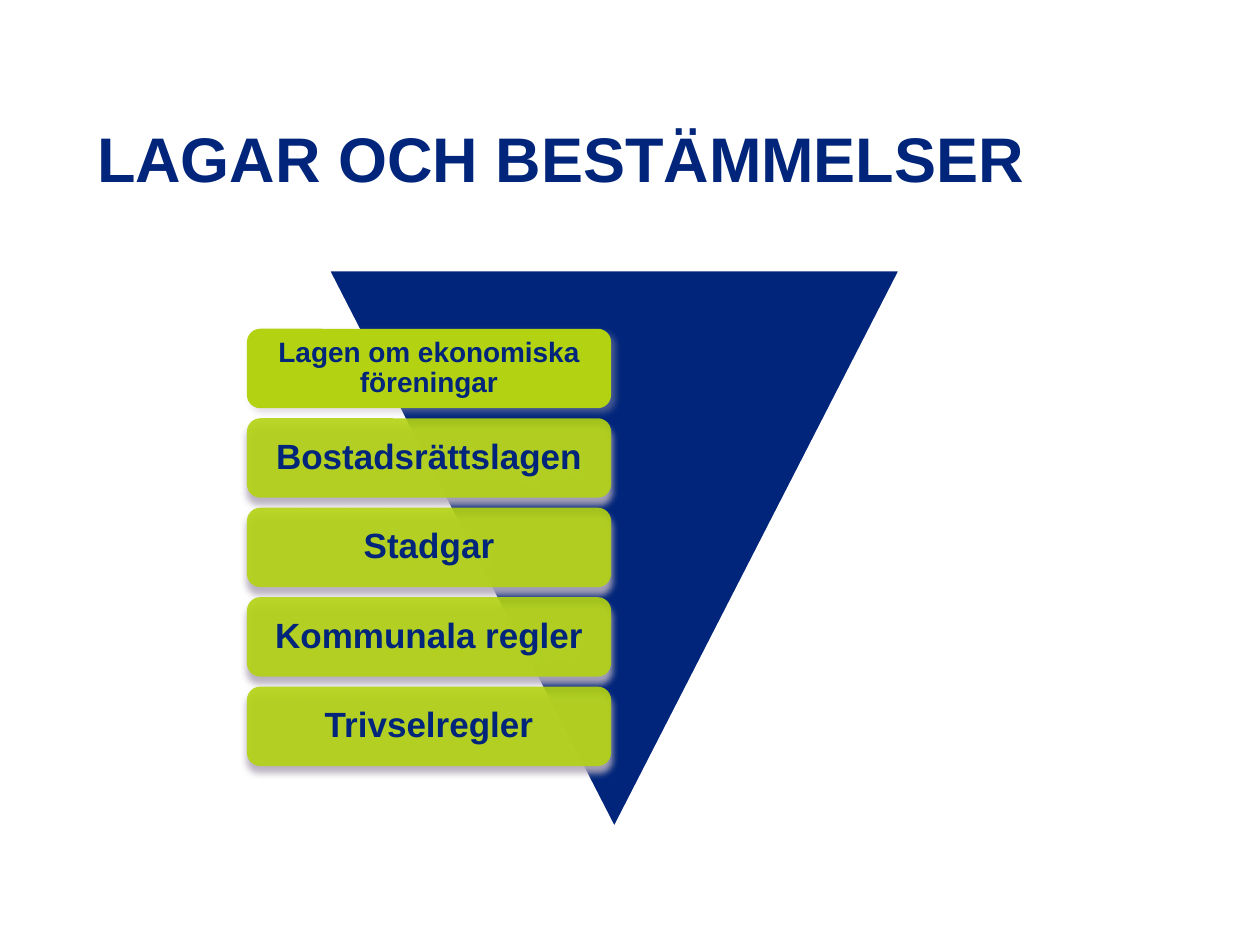
from lxml.etree import SubElement as Sub
from pptx import Presentation
from pptx.dml.color import RGBColor
from pptx.enum.shapes import MSO_SHAPE as Kind
from pptx.enum.text import MSO_ANCHOR as Anchor, PP_ALIGN as Align
from pptx.oxml.ns import qn
from pptx.util import Inches, Pt

NAVY = RGBColor(0x00, 0x25, 0x7A)
LIME = RGBColor(0xB3, 0xD3, 0x12)
HAZE = RGBColor(0xB5, 0xAC, 0xBD)
WHITE = RGBColor(0xFF, 0xFF, 0xFF)
RULES = ["Lagen om ekonomiska föreningar", "Bostadsrättslagen", "Stadgar",
         "Kommunala regler", "Trivselregler"]


def write(frame, text, size, align):
    """Put one bold navy run in a text frame."""
    para = frame.paragraphs[0]
    para.alignment = align
    para.line_spacing = 0.9
    run = para.add_run()
    run.text = text
    font = run.font
    font.name, font.size, font.bold = "Arial", Pt(size), True
    font.color.rgb = NAVY


def fade(color, share):
    """Set the opacity of a colour element in percent."""
    Sub(color, qn("a:alpha")).set("val", str(share * 1000))


def shade(shape, share, dist, angle):
    """Give a shape a soft outer shadow."""
    shape.shadow.inherit = False
    effects = shape._element.spPr.find(qn("a:effectLst"))
    outer = Sub(effects, qn("a:outerShdw"), blurRad=str(Pt(4)),
                dist=str(Pt(dist)), dir=str(angle * 60000), rotWithShape="0")
    fade(Sub(outer, qn("a:srgbClr"), val=str(HAZE)), share)


def add_title(slide, left, top, width, height):
    """Move the title placeholder into its box and fill it."""
    title = slide.shapes.title
    title.left, title.top, title.width, title.height = left, top, width, height
    frame = title.text_frame
    frame.word_wrap = True
    frame.vertical_anchor = Anchor.BOTTOM
    frame.margin_bottom = Inches(0.57)
    write(frame, "LAGAR OCH BESTÄMMELSER", 36, Align.LEFT)


def add_bar(slide, text, box, first):
    """Draw one rounded bar with its label."""
    bar = slide.shapes.add_shape(Kind.ROUNDED_RECTANGLE, *box)
    bar.fill.solid()
    bar.fill.fore_color.rgb = LIME
    bar.line.fill.background()
    if first:
        shade(bar, 40, 3, 45)
    else:
        fade(bar._element.spPr.find(qn("a:solidFill"))[0], 90)
        shade(bar, 100, 4, 90)
    frame = bar.text_frame
    frame.word_wrap = True
    frame.vertical_anchor = Anchor.MIDDLE
    pad = Inches(0.07 if first else 0.08)
    frame.margin_left = frame.margin_right = pad
    frame.margin_top = frame.margin_bottom = pad
    write(frame, text, 16 if first else 20, Align.CENTER)


def add_funnel(slide, left, top, width, height):
    """Draw the inverted triangle and the bars over its left side."""
    wedge = slide.shapes.add_shape(
        Kind.ISOSCELES_TRIANGLE, left, top, width, height)
    wedge.rotation = 180
    wedge.fill.solid()
    wedge.fill.fore_color.rgb = NAVY
    wedge.line.color.rgb = WHITE
    wedge.line.width = Pt(2)
    wedge.shadow.inherit = False
    for row, text in enumerate(RULES):
        box = (left - Inches(0.64), top + Inches(0.47 + 0.71 * row),
               Inches(2.89), Inches(0.63))
        add_bar(slide, text, box, row == 0)


def main():
    """Build and save the slide."""
    deck = Presentation()
    deck.slide_width, deck.slide_height = Inches(10), Inches(7.5)
    slide = deck.slides.add_slide(deck.slide_layouts[5])
    add_title(slide, Inches(0.67), Inches(1.06), Inches(9.41), Inches(1.07))
    add_funnel(slide, Inches(2.6), Inches(2.14), Inches(4.55), Inches(4.44))
    deck.save("out.pptx")


if __name__ == "__main__":
    main()
